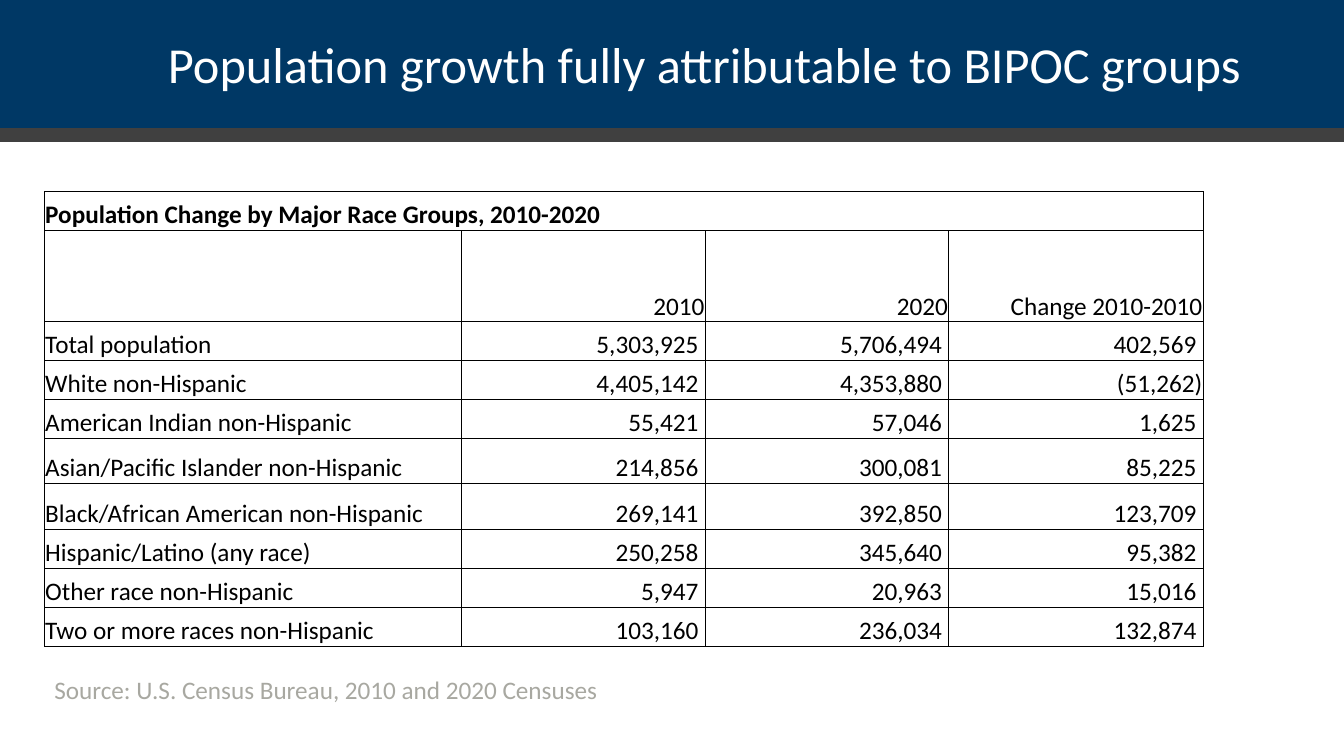
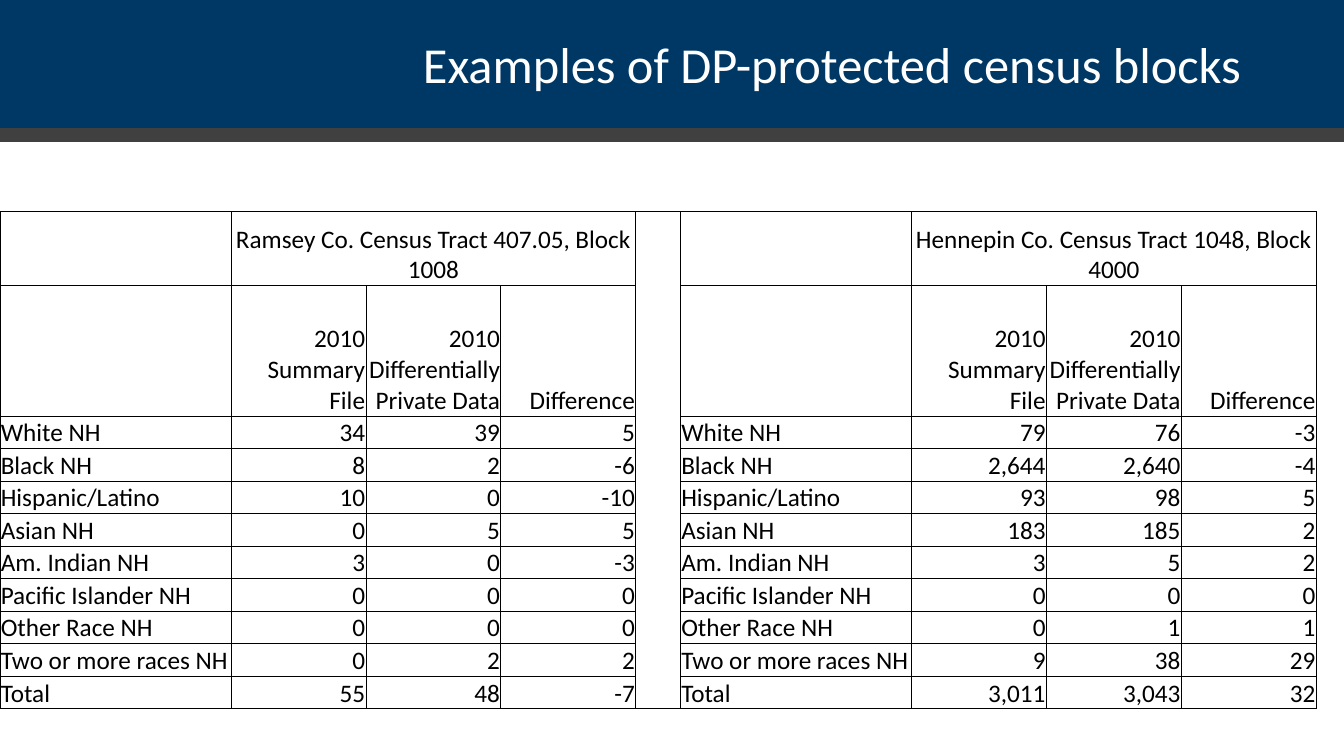
from lxml import etree
from pptx import Presentation
from pptx.dml.color import RGBColor
from pptx.enum.shapes import MSO_SHAPE
from pptx.enum.text import MSO_ANCHOR, MSO_AUTO_SIZE, PP_ALIGN
from pptx.oxml.ns import qn
from pptx.util import Cm, Pt

NAVY = RGBColor(0x00, 0x38, 0x65)
CHARCOAL = RGBColor(0x40, 0x40, 0x40)
GREY = RGBColor(0xA8, 0xA8, 0xA1)
WHITE = RGBColor(0xFF, 0xFF, 0xFF)
BLACK = RGBColor(0x00, 0x00, 0x00)

FONT = "Calibri"
WIDTH, HEIGHT = 33.87, 19.05
INSET = 0.02
PAREN_GAP = 0.15  # room for a closing parenthesis beside positive numbers

GROWTH = [
    ("Total population", 5303925, 5706494),
    ("White non-Hispanic", 4405142, 4353880),
    ("American Indian non-Hispanic", 55421, 57046),
    ("Asian/Pacific Islander non-Hispanic", 214856, 300081),
    ("Black/African American non-Hispanic", 269141, 392850),
    ("Hispanic/Latino (any race)", 250258, 345640),
    ("Other race non-Hispanic", 5947, 20963),
    ("Two or more races non-Hispanic", 103160, 236034),
]

# Label, then (summary file, private data) for each of the two blocks
BLOCKS = [
    ("White NH", (34, 39), (79, 76)),
    ("Black NH", (8, 2), (2644, 2640)),
    ("Hispanic/Latino", (10, 0), (93, 98)),
    ("Asian NH", (0, 5), (183, 185)),
    ("Am. Indian NH", (3, 0), (3, 5)),
    ("Pacific Islander NH", (0, 0), (0, 0)),
    ("Other Race NH", (0, 0), (0, 1)),
    ("Two or more races NH", (0, 2), (9, 38)),
    ("Total", (55, 48), (3011, 3043)),
]


def add_run(p, text, size, color, bold=False):
    r = p.add_run()
    r.text = text
    r.font.name = FONT
    r.font.size = Pt(size)
    r.font.color.rgb = color
    r.font.bold = bold


def add_bands(s):
    """Draw the header bands and move them to the slide's layout."""
    tree = s.slide_layout.shapes.element
    bands = [(0, 3.39, NAVY), (3.23, 0.34, CHARCOAL)]
    for i, (top, height, color) in enumerate(bands):
        sp = s.shapes.add_shape(MSO_SHAPE.RECTANGLE, 0, Cm(top),
                                Cm(WIDTH), Cm(height))
        sp.shadow.inherit = False
        sp.fill.solid()
        sp.fill.fore_color.rgb = color
        if color == CHARCOAL:
            sp.line.color.rgb = color
            sp.line.width = Pt(0.85)
        else:
            sp.line.fill.background()
        sp.element.nvSpPr.cNvPr.set("id", str(100 + i))
        tree.insert(2 + i, sp.element)


def add_title(s, text):
    sp = s.shapes.title
    sp.left, sp.top, sp.width, sp.height = Cm(2.33), Cm(0.43), Cm(29.21), Cm(2.54)
    tf = sp.text_frame
    tf.auto_size = MSO_AUTO_SIZE.NONE
    tf.vertical_anchor = MSO_ANCHOR.MIDDLE
    p = tf.paragraphs[0]
    p.alignment = PP_ALIGN.RIGHT
    p.line_spacing = 0.9
    add_run(p, text, 36, WHITE)


def add_source(s, text):
    tf = s.shapes.add_textbox(Cm(1.12), Cm(16.87), Cm(20.85), Cm(1.03)).text_frame
    tf.word_wrap = True
    tf.auto_size = MSO_AUTO_SIZE.SHAPE_TO_FIT_TEXT
    add_run(tf.paragraphs[0], text, 18, GREY)


def set_borders(cell, sides):
    """Rule the given sides (letters of LRTB) and leave the others bare."""
    tc_pr = cell._tc.get_or_add_tcPr()
    for side in "LRTB":
        ln = etree.SubElement(tc_pr, qn(f"a:ln{side}"), w=str(Pt(0.5)))
        if side in sides:
            fill = etree.SubElement(ln, qn("a:solidFill"))
            etree.SubElement(fill, qn("a:srgbClr"), val=str(BLACK))
        else:
            etree.SubElement(ln, qn("a:noFill"))


def fill_cell(cell, text, align, bold=False, sides="LRTB"):
    cell.margin_left = cell.margin_right = cell.margin_top = Cm(INSET)
    cell.margin_bottom = 0
    cell.vertical_anchor = MSO_ANCHOR.BOTTOM
    set_borders(cell, sides)
    cell.fill.background()
    if text:
        p = cell.text_frame.paragraphs[0]
        p.alignment = align
        add_run(p, text, 18, BLACK, bold)


def add_grid(s, left, top, widths, heights):
    """Add a plain table with the given column widths and row heights."""
    table = s.shapes.add_table(len(heights), len(widths), Cm(left), Cm(top),
                               Cm(sum(widths)), Cm(sum(heights))).table
    table.first_row = table.horz_banding = False
    for column, width in zip(table.columns, widths):
        column.width = Cm(width)
    for row, height in zip(table.rows, heights):
        row.height = Cm(height)
    return table


def accounting(n):
    return f"({-n:,})" if n < 0 else f"{n:,}"


def add_growth_table(s):
    heights = [0.98, 2.3] + [0.98] * 3 + [1.14, 1.16] + [0.98] * 3
    table = add_grid(s, 1.12, 4.83, [10.51, 6.14, 6.14, 6.41], heights)
    rows = [("Population Change by Major Race Groups, 2010-2020", "", "", ""),
            ("", "2010", "2020", "Change 2010-2010")]
    rows += [(label, *map(accounting, (old, new, new - old)))
             for label, old, new in GROWTH]
    for r, texts in enumerate(rows):
        for c, text in enumerate(texts):
            cell = table.cell(r, c)
            fill_cell(cell, text, PP_ALIGN.RIGHT if c else PP_ALIGN.LEFT, bold=r == 0)
            if r > 1 and c and not text.endswith(")"):
                cell.margin_right = Cm(INSET + PAREN_GAP)
    table.cell(0, 0).merge(table.cell(0, 3))


def block_rows(heading, block):
    """Rows of one census block: headings, then values with differences."""
    rows = [("", heading, "", ""),
            ("", "2010 Summary File", "2010 Differentially Private Data", "Difference")]
    for label, *pairs in BLOCKS:
        summary, private = pairs[block]
        rows.append((label, f"{summary:,}", f"{private:,}", f"{private - summary:,}"))
    return rows


def add_blocks_table(s):
    block_widths = [5.82] + [3.4] * 3
    heights = [1.87, 3.28] + [0.82] * len(BLOCKS)
    table = add_grid(s, 0, 5.33, block_widths + [1.13] + block_widths, heights)
    headings = ["Ramsey Co. Census Tract 407.05, Block 1008",
                "Hennepin Co. Census Tract 1048, Block 4000"]
    for block, heading in enumerate(headings):
        first = block * (len(block_widths) + 1)
        for r, texts in enumerate(block_rows(heading, block)):
            for c, text in enumerate(texts):
                align = PP_ALIGN.RIGHT if c else PP_ALIGN.LEFT
                fill_cell(table.cell(r, first + c), text,
                          PP_ALIGN.CENTER if r == 0 else align)
        table.cell(0, first + 1).merge(table.cell(0, first + 3))

    last = len(heights) - 1
    for r in range(len(heights)):
        gap = table.cell(r, len(block_widths))
        sides = "LR" + ("T" if r == 0 else "") + ("B" if r == last else "")
        fill_cell(gap, "", PP_ALIGN.LEFT, sides=sides)
        gap.fill.solid()
        gap.fill.fore_color.rgb = WHITE


def main():
    prs = Presentation()
    prs.slide_width, prs.slide_height = Cm(WIDTH), Cm(HEIGHT)
    title_only = prs.slide_layouts[5]

    s = prs.slides.add_slide(title_only)
    add_bands(s)
    add_title(s, "Population growth fully attributable to BIPOC groups")
    add_growth_table(s)
    add_source(s, "Source: U.S. Census Bureau, 2010 and 2020 Censuses")

    s = prs.slides.add_slide(title_only)
    add_title(s, "Examples of DP-protected census blocks")
    add_blocks_table(s)

    prs.save("out.pptx")


if __name__ == "__main__":
    main()
